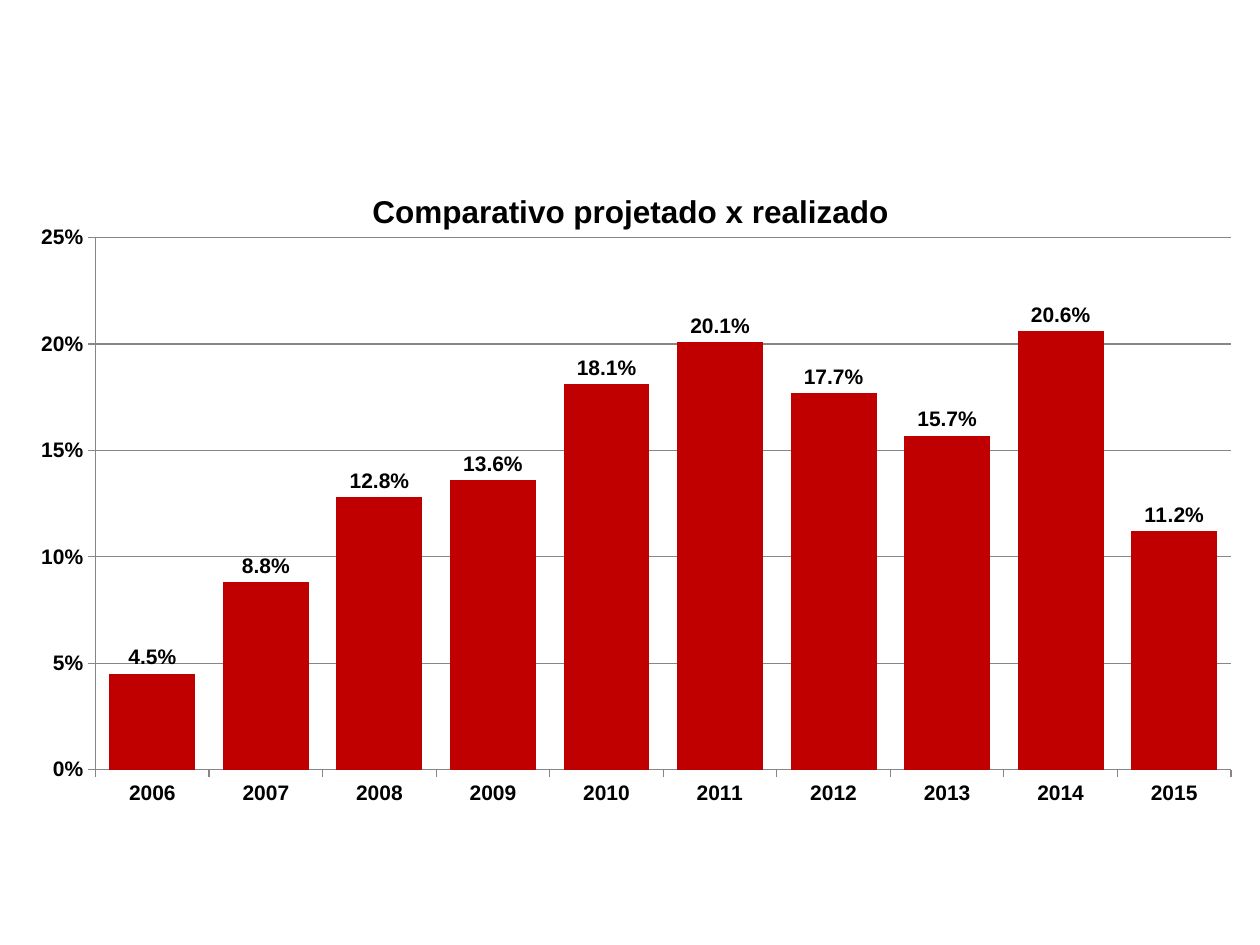
import pptx
import pptx.chart.data
import pptx.dml.color
import pptx.enum.chart
import pptx.oxml
import pptx.util
from pptx.util import Inches

ENUM = pptx.enum.chart
YEARS = [str(year) for year in range(2006, 2016)]
RATES = [0.045, 0.088, 0.128, 0.136, 0.181, 0.201, 0.177, 0.157, 0.206, 0.112]
PLOT = {"x": 0.075, "y": 0.111, "w": 0.902, "h": 0.812}


def shade(code):
    return pptx.dml.color.RGBColor.from_string(code)


def apply(target, values):
    for name, value in values.items():
        setattr(target, name, value)


def style(font, size):
    apply(font, {"name": "Arial", "size": pptx.util.Pt(size), "bold": True})
    font.color.rgb = shade("000000")


def rule(line):
    line.color.rgb = shade("868686")
    line.width = pptx.util.Pt(0.75)


def place(chart, plot):
    """Fix the inner plot area as fractions of the chart."""
    area = chart.plots[0]._element.getparent()
    for old in area.findall(pptx.oxml.ns.qn("c:layout")):
        area.remove(old)
    modes = "".join(f'<c:{side}Mode val="edge"/>' for side in "xy")
    sizes = "".join(f'<c:{key} val="{part}"/>' for key, part in plot.items())
    area.insert(0, pptx.oxml.parse_xml(
        f'<c:layout {pptx.oxml.ns.nsdecls("c")}><c:manualLayout>'
        f'<c:layoutTarget val="inner"/>{modes}{sizes}'
        '</c:manualLayout></c:layout>'))


def head(chart, text):
    chart.has_title = True
    frame = chart.chart_title.text_frame
    frame.text = text
    style(frame.paragraphs[0].runs[0].font, 18)
    chart.chart_title.include_in_layout = True


def axes(chart):
    value, years = chart.value_axis, chart.category_axis
    apply(value, {"minimum_scale": 0, "maximum_scale": 0.25,
                  "major_unit": 0.05, "has_major_gridlines": True})
    apply(value.tick_labels, {"number_format": "0%",
                              "number_format_is_linked": False})
    years.tick_label_position = ENUM.XL_TICK_LABEL_POSITION.LOW
    for axis in (value, years):
        apply(axis, {"major_tick_mark": ENUM.XL_TICK_MARK.OUTSIDE,
                     "minor_tick_mark": ENUM.XL_TICK_MARK.NONE})
        style(axis.tick_labels.font, 12)
        rule(axis.format.line)
    rule(value.major_gridlines.format.line)


def bars(plot):
    apply(plot, {"gap_width": 32, "overlap": -27,
                 "vary_by_categories": False, "has_data_labels": True})
    fill = plot.series[0].format.fill
    fill.solid()
    fill.fore_color.rgb = shade("C00000")
    labels = plot.data_labels
    apply(labels, {"show_value": True, "number_format": "0.0%",
                   "number_format_is_linked": False,
                   "position": ENUM.XL_LABEL_POSITION.OUTSIDE_END})
    style(labels.font, 12)


def add_rates(slide, left, top, width, height):
    data = pptx.chart.data.CategoryChartData(number_format="0.0%")
    data.categories = YEARS
    data.add_series("Series 1", RATES)
    chart = slide.shapes.add_chart(
        ENUM.XL_CHART_TYPE.COLUMN_CLUSTERED,
        left, top, width, height, data).chart
    chart.has_legend = False
    style(chart.font, 12)
    head(chart, "Comparativo projetado x realizado")
    axes(chart)
    bars(chart.plots[0])
    place(chart, PLOT)


def main():
    deck = pptx.Presentation()
    apply(deck, {"slide_width": Inches(10), "slide_height": Inches(7.5)})
    slide = deck.slides.add_slide(deck.slide_layouts[6])
    add_rates(slide, Inches(0.01), Inches(1.31), Inches(9.99), Inches(5.2))
    deck.save("out.pptx")


if __name__ == "__main__":
    main()
